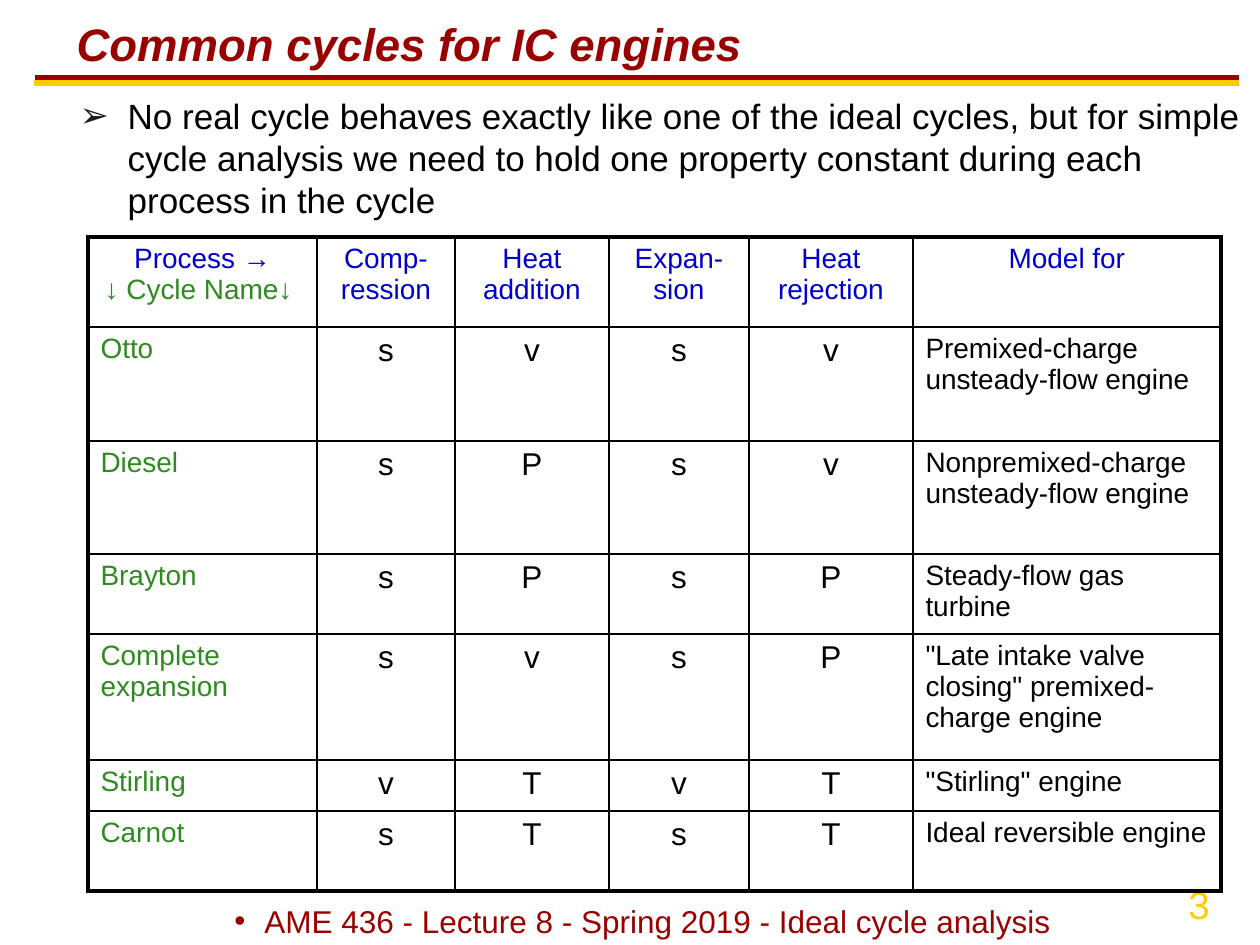
from typing import NamedTuple

from lxml.etree import SubElement
from pptx import Presentation
from pptx.dml.color import RGBColor
from pptx.enum.shapes import MSO_CONNECTOR as Connector
from pptx.enum.text import MSO_ANCHOR as Anchor, MSO_AUTO_SIZE as AutoSize, PP_ALIGN as Align
from pptx.oxml import parse_xml
from pptx.oxml.ns import nsdecls, qn
from pptx.util import Emu, Pt

DARK_RED = RGBColor(0x99, 0x00, 0x00)
RULE_RED = RGBColor(0x9B, 0x00, 0x00)
GOLD = RGBColor(0xFF, 0xCC, 0x00)
BLUE = RGBColor(0x00, 0x00, 0xCC)
GREEN = RGBColor(0x2F, 0x8B, 0x20)
BLACK = RGBColor(0x01, 0x00, 0x00)
BULLET_GREY = RGBColor(0x1C, 0x1C, 0x1C)

PX = 914400 / 126
THIN, THICK = 1, 2.25


class Box(NamedTuple):
    left: int
    top: int
    width: int
    height: int


class Rule(NamedTuple):
    left: int
    right: int
    y: int
    color: RGBColor


class Cycle(NamedTuple):
    name: str
    processes: str
    model: str
    height: int


RULES = [Rule(35, 1239, 78, RULE_RED), Rule(34, 1239, 83, GOLD)]
HEADINGS = ["Comp-ression", "Heat addition", "Expan-sion", "Heat rejection", "Model for"]
COLUMNS = [229, 138, 154, 140, 164, 308]
HEADER_HEIGHT = 90
CYCLES = [
    Cycle("Otto", "svsv", "Premixed-charge unsteady-flow engine", 114),
    Cycle("Diesel", "sPsv", "Nonpremixed-charge unsteady-flow engine", 113),
    Cycle("Brayton", "sPsP", "Steady-flow gas turbine", 80),
    Cycle("Complete expansion", "svsP",
          '"Late intake valve closing" premixed-charge engine', 126),
    Cycle("Stirling", "vTvT", '"Stirling" engine', 51),
    Cycle("Carnot", "sTsT", "Ideal reversible engine", 80),
]


def px(value: float) -> Emu:
    return Emu(round(value * PX))


def place(shape, box: Box) -> None:
    for name, value in box._asdict().items():
        setattr(shape, name, px(value))


def write(para, text: str, size: int, color: RGBColor, align=Align.LEFT, **styles) -> None:
    para.alignment = align
    span = para.add_run()
    span.text = text
    span.font.color.rgb = color
    for name, value in {"name": "Arial", "size": Pt(size), **styles}.items():
        setattr(span.font, name, value)


def add_bullet(para, mark: str, indent: int, color: RGBColor) -> None:
    properties = para._p.get_or_add_pPr()
    properties.set("marL", str(px(indent)))
    properties.set("indent", str(-px(indent)))
    SubElement(SubElement(properties, qn("a:buClr")), qn("a:srgbClr"), val=str(color))
    SubElement(properties, qn("a:buFont"), typeface="Arial")
    SubElement(properties, qn("a:buChar"), char=mark)


def add_text_box(page, box: Box):
    shape = page.shapes.add_textbox(*map(px, box))
    shape.text_frame.word_wrap = True
    return shape.text_frame


def add_rule(page, rule: Rule) -> None:
    line = page.shapes.add_connector(
        Connector.STRAIGHT, px(rule.left), px(rule.y), px(rule.right), px(rule.y))
    line.line.color.rgb = rule.color
    line.line.width = Pt(3)
    SubElement(line._element.spPr, qn("a:effectLst"))


def set_borders(cell, widths: dict[str, float]) -> None:
    """Draw the sides L, R, T and B, which the schema puts before the fill."""
    properties = cell._tc.get_or_add_tcPr()
    for index, (side, width) in enumerate(widths.items()):
        properties.insert(index, parse_xml(
            f'<a:ln{side} {nsdecls("a")} w="{Pt(width)}"><a:solidFill>'
            f'<a:srgbClr val="{BLACK}"/></a:solidFill></a:ln{side}>'))


def add_cycle_table(page) -> None:
    heights = [HEADER_HEIGHT] + [cycle.height for cycle in CYCLES]
    box = Box(88, 237, sum(COLUMNS), sum(heights))
    table = page.shapes.add_table(len(heights), len(COLUMNS), *map(px, box)).table
    table.first_row = table.horz_banding = False
    for column, width in zip(table.columns, COLUMNS):
        column.width = px(width)
    for row, height in zip(table.rows, heights):
        row.height = px(height)

    corner = table.cell(0, 0).text_frame
    write(corner.paragraphs[0], "Process →", 16, BLUE, Align.CENTER)
    write(corner.add_paragraph(), "↓ Cycle Name↓ ", 16, GREEN, Align.CENTER)
    for column, heading in enumerate(HEADINGS, 1):
        write(table.cell(0, column).text_frame.paragraphs[0], heading, 16, BLUE, Align.CENTER)
    for row, cycle in enumerate(CYCLES, 1):
        paras = [cell.text_frame.paragraphs[0] for cell in table.rows[row].cells]
        write(paras[0], cycle.name, 16, GREEN)
        for para, process in zip(paras[1:-1], cycle.processes):
            write(para, process, 18, BLACK, Align.CENTER)
        write(paras[-1], cycle.model, 16, BLACK)

    last_row, last_column = len(heights) - 1, len(COLUMNS) - 1
    for row in range(len(heights)):
        for column in range(len(COLUMNS)):
            cell = table.cell(row, column)
            cell.fill.background()
            outer = {"L": column == 0, "R": column == last_column,
                     "T": row == 0, "B": row == last_row}
            set_borders(cell, {side: THICK if edge else THIN for side, edge in outer.items()})


def main() -> None:
    deck = Presentation()
    deck.slide_width, deck.slide_height = px(1260), px(945)
    page = deck.slides.add_slide(deck.slide_layouts[1])

    title, body = page.placeholders
    place(title, Box(64, 21, 1164, 53))
    place(body, Box(67, 88, 1193, 794))
    for shape, anchor in ((title, Anchor.MIDDLE), (body, Anchor.TOP)):
        shape.text_frame.auto_size = AutoSize.NONE
        shape.text_frame.vertical_anchor = anchor
    heading = title.text_frame.paragraphs[0]
    heading.line_spacing = 0.85
    write(heading, "Common cycles for IC engines", 26, DARK_RED, bold=True, italic=True)
    point = body.text_frame.paragraphs[0]
    point.space_before = Pt(0)
    add_bullet(point, "➢", 48, BULLET_GREY)
    write(point, "No real cycle behaves exactly like one of the ideal cycles, but for simple "
          "cycle analysis we need to hold one property constant during each process in "
          "the cycle", 20, BLACK)

    number = add_text_box(page, Box(1176, 874, 73, 59))
    number.vertical_anchor = Anchor.BOTTOM
    write(number.paragraphs[0], "3", 22, GOLD)
    for rule in RULES:
        add_rule(page, rule)
    footer = add_text_box(page, Box(107, 896, 1071, 49)).paragraphs[0]
    add_bullet(footer, "•", 30, DARK_RED)
    write(footer, "AME 436 - Lecture 8 - Spring 2019 - Ideal cycle analysis", 18,
          DARK_RED, Align.CENTER)
    add_cycle_table(page)
    deck.save("out.pptx")


if __name__ == "__main__":
    main()
